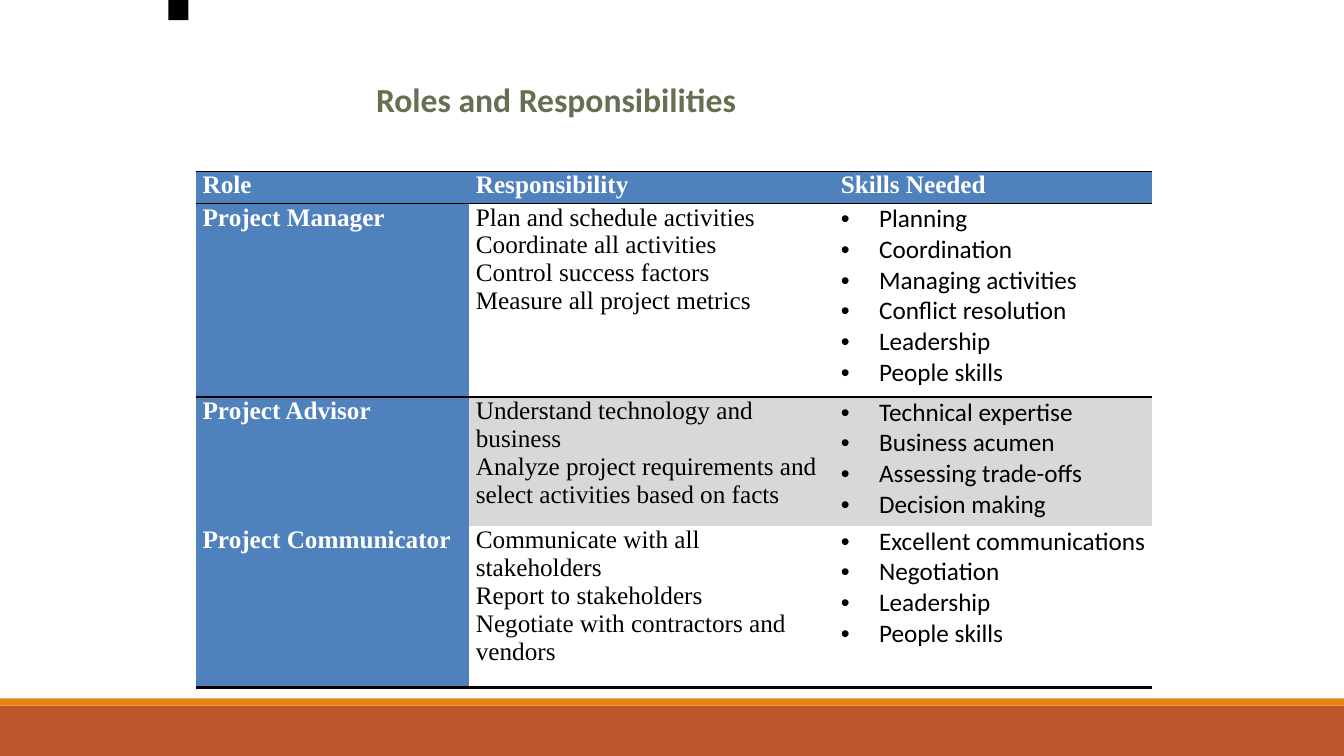
"""Build the Roles and Responsibilities slide."""
from lxml import etree
from pptx import Presentation
from pptx.dml.color import RGBColor
from pptx.enum import shapes, text
from pptx.oxml import ns
from pptx.util import Inches, Pt

TITLE = "Roles and Responsibilities"
HEADER = ("Role", "Responsibility", "Skills Needed")
ROLES = [
    ("Project Manager",
     ["Plan and schedule activities", "Coordinate all activities",
      "Control success factors", "Measure all project metrics"],
     ["Planning", "Coordination", "Managing activities",
      "Conflict resolution", "Leadership", "People skills"]),
    ("Project Advisor",
     ["Understand technology and business",
      "Analyze project requirements and select activities based on facts"],
     ["Technical expertise", "Business acumen", "Assessing trade-offs",
      "Decision making"]),
    ("Project Communicator",
     ["Communicate with all stakeholders", "Report to stakeholders",
      "Negotiate with contractors and vendors"],
     ["Excellent communications", "Negotiation", "Leadership", "People skills"]),
]
COL_WIDTHS = (2.71, 3.62, 3.16)
ROW_HEIGHTS = (0.32, 1.92, 1.28, 1.6)
RULES = {0: {"lnT": 1, "lnB": 1}, 1: {"lnT": 1}, 3: {"lnB": 2.25}}
BARS = [
    ((0, 7, 13.33, 0.5), "BD582C"),
    ((0, 6.93, 13.33, 0.07), "E48312"),
    ((1.67, -0.2, 0.2, 0.4), "000000"),
]
SERIF, SANS = "Times New Roman", "Calibri"
BLUE, GREY, WHITE, BLACK = "4F81BD", "D8D8D8", "FFFFFF", "000000"
NO_STYLE = "{2D5ABB26-0587-4C30-8999-92F81FD0307C}"


def rgb(value):
    """Turn a hex string into a colour."""
    return RGBColor.from_string(value)


def apply(obj, **values):
    """Set several attributes on one object."""
    for name, value in values.items():
        setattr(obj, name, value)


def style_run(p, line, font, size, color, bold):
    """Add one formatted run to a paragraph."""
    r = p.add_run()
    r.text = line
    apply(r.font, name=font, size=Pt(size), bold=bold)
    r.font.color.rgb = rgb(color)


def add_bullet(p):
    """Give a paragraph a hanging round bullet."""
    pPr = p._p.get_or_add_pPr()
    pPr.set("marL", str(Inches(0.38)))
    pPr.set("indent", str(Inches(-0.38)))
    etree.SubElement(pPr, ns.qn("a:buFont")).set("typeface", "Arial")
    etree.SubElement(pPr, ns.qn("a:buChar")).set("char", "•")


def add_rules(cell, rules):
    """Draw black rules on the named sides of a cell."""
    tcPr = cell._tc.get_or_add_tcPr()
    for i, (side, width) in enumerate(rules.items()):
        ln = etree.Element(ns.qn("a:" + side), w=str(Pt(width)))
        fill = etree.SubElement(ln, ns.qn("a:solidFill"))
        etree.SubElement(fill, ns.qn("a:srgbClr")).set("val", BLACK)
        tcPr.insert(i, ln)


def fill_cell(cell, row, col, lines):
    """Write and format one table cell."""
    labelled = row == 0 or col == 0
    skills = col == 2 and row > 0
    apply(cell, margin_left=Inches(0.07), margin_right=Inches(0.07),
          margin_top=0, margin_bottom=0)
    if labelled or row == 2:
        cell.fill.solid()
        cell.fill.fore_color.rgb = rgb(BLUE if labelled else GREY)
    else:
        cell.fill.background()
    tf = cell.text_frame
    for i, line in enumerate(lines):
        p = tf.add_paragraph() if i else tf.paragraphs[0]
        if skills:
            add_bullet(p)
        style_run(p, line, SANS if skills else SERIF, 18,
                  WHITE if labelled else BLACK, labelled)
    add_rules(cell, RULES.get(row, {}))


def add_title(s):
    """Place and format the slide title."""
    sp = s.shapes.title
    apply(sp, left=Inches(3.63), top=Inches(0.78),
          width=Inches(8.56), height=Inches(0.39))
    tf = sp.text_frame
    apply(tf, margin_left=Inches(0.1), margin_right=0,
          margin_top=Inches(0.05), margin_bottom=Inches(0.05),
          word_wrap=True, auto_size=text.MSO_AUTO_SIZE.NONE,
          vertical_anchor=text.MSO_ANCHOR.TOP)
    p = tf.paragraphs[0]
    apply(p, alignment=text.PP_ALIGN.LEFT, line_spacing=0.9, space_before=Pt(0))
    style_run(p, TITLE, SANS, 24, "637052", True)


def add_roles(s):
    """Build the table of roles."""
    frame = s.shapes.add_table(
        len(ROW_HEIGHTS), len(COL_WIDTHS), Inches(1.94), Inches(1.7),
        Inches(sum(COL_WIDTHS)), Inches(sum(ROW_HEIGHTS)))
    table = frame.table
    apply(table, first_row=False, horz_banding=False)
    table._tbl.tblPr.find(ns.qn("a:tableStyleId")).text = NO_STYLE
    for column, width in zip(table.columns, COL_WIDTHS):
        column.width = Inches(width)
    for row, height in zip(table.rows, ROW_HEIGHTS):
        row.height = Inches(height)
    for r, entries in enumerate([HEADER, *ROLES]):
        for c, entry in enumerate(entries):
            lines = [entry] if isinstance(entry, str) else entry
            fill_cell(table.cell(r, c), r, c, lines)


def main():
    """Assemble and save the slide."""
    prs = Presentation()
    apply(prs, slide_width=Inches(13.33), slide_height=Inches(7.5))
    s = prs.slides.add_slide(prs.slide_layouts[5])
    add_title(s)
    add_roles(s)
    for box, color in BARS:
        sp = s.shapes.add_shape(shapes.MSO_SHAPE.RECTANGLE, *map(Inches, box))
        sp.shadow.inherit = False
        sp.fill.solid()
        sp.fill.fore_color.rgb = rgb(color)
        sp.line.fill.background()
    prs.save("out.pptx")


if __name__ == "__main__":
    main()
